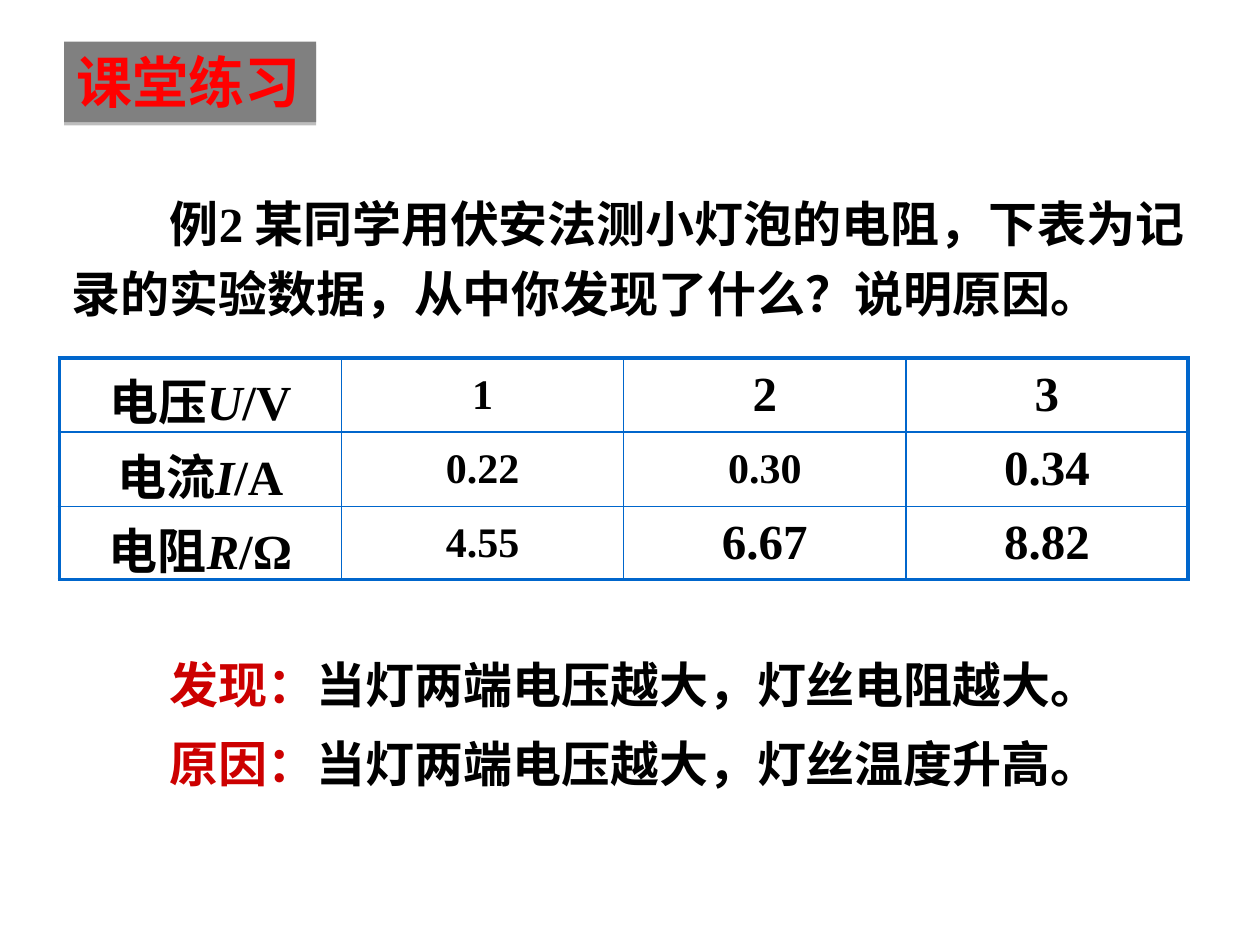
import pptx
import pptx.dml.color
import pptx.enum.shapes
import pptx.enum.text
import pptx.oxml
import pptx.oxml.ns
import pptx.util
from lxml import etree
from pptx.util import Inches

qn = pptx.oxml.ns.qn
ALIGN = pptx.enum.text.PP_ALIGN
ANCHOR = pptx.enum.text.MSO_ANCHOR


def rgb(hex_color):
    return pptx.dml.color.RGBColor.from_string(hex_color)


def add_run(p, text, size=28, font="Noto Sans CJK SC", color="000000", italic=False):
    r = p.add_run()
    r.text = text
    r.font.size = pptx.util.Pt(size)
    r.font.name = font
    r.font.bold = True
    r.font.italic = italic
    r.font.color.rgb = rgb(color)
    ea = etree.SubElement(r.font._element, qn("a:ea"))
    ea.set("typeface", "Noto Sans CJK SC")
    return r


class Deck:
    LATIN = "Times New Roman"
    BLUE, RED, DARK_RED, GRAY = "0066CC", "FF0000", "CC0000", "808080"
    THIN, THICK = 1, 2.25

    def __init__(self):
        self.prs = pptx.Presentation()
        self.prs.slide_width, self.prs.slide_height = Inches(10), Inches(7.5)
        self.s = self.prs.slides.add_slide(self.prs.slide_layouts[6])

    def text(self, x, y, w, h, paragraphs):
        """Each paragraph is a list of (text, format) runs."""
        tf = self.s.shapes.add_textbox(Inches(x), Inches(y), Inches(w), Inches(h)).text_frame
        tf.word_wrap = True
        for i, runs in enumerate(paragraphs):
            p = tf.paragraphs[0] if i == 0 else tf.add_paragraph()
            p.line_spacing = 1.2
            p.space_before = pptx.util.Pt(5)
            p._p.get_or_add_pPr().set("indent", str(Inches(0.78)))
            for text, fmt in runs:
                add_run(p, text, **fmt)

    def heading(self, x, y, w, h, text):
        sp = self.s.shapes.add_shape(pptx.enum.shapes.MSO_SHAPE.RECTANGLE,
                                     Inches(x), Inches(y), Inches(w), Inches(h))
        sp.fill.solid()
        sp.fill.fore_color.rgb = rgb(self.GRAY)
        sp.line.fill.background()
        sp.shadow.inherit = False
        effects = sp._element.spPr.find(qn("a:effectLst"))
        effects.append(pptx.oxml.parse_xml(
            '<a:outerShdw xmlns:a="http://schemas.openxmlformats.org/drawingml/2006/main"'
            ' dist="22860" dir="5400000" algn="ctr" rotWithShape="0">'
            '<a:srgbClr val="000000"><a:alpha val="25000"/></a:srgbClr></a:outerShdw>'))
        tf = sp.text_frame
        tf.word_wrap = False
        tf.vertical_anchor = ANCHOR.TOP
        tf.paragraphs[0].alignment = ALIGN.LEFT
        add_run(tf.paragraphs[0], text, size=32, color=self.RED)

    def border(self, cell, side, width):
        ln = etree.SubElement(cell._tc.get_or_add_tcPr(), qn("a:" + side))
        ln.set("w", str(pptx.util.Pt(width)))
        fill = etree.SubElement(ln, qn("a:solidFill"))
        etree.SubElement(fill, qn("a:srgbClr")).set("val", self.BLUE)

    def table(self, x, y, col_width, row_heights, rows):
        """Each cell is a list of (text, format) runs."""
        n_rows, n_cols = len(rows), len(rows[0])
        tbl = self.s.shapes.add_table(n_rows, n_cols, Inches(x), Inches(y),
                                      Inches(col_width * n_cols), Inches(sum(row_heights))).table
        tbl.first_row = tbl.horz_banding = False
        for col in tbl.columns:
            col.width = Inches(col_width)
        for i, row in enumerate(rows):
            tbl.rows[i].height = Inches(row_heights[i])
            for j, runs in enumerate(row):
                cell = tbl.cell(i, j)
                cell.vertical_anchor = ANCHOR.MIDDLE
                p = cell.text_frame.paragraphs[0]
                p.alignment = ALIGN.CENTER
                for text, fmt in runs:
                    add_run(p, text, font=self.LATIN, **fmt)
                # Thick outer frame, thin inner grid
                outer = {"lnL": j == 0, "lnR": j == n_cols - 1,
                         "lnT": i == 0, "lnB": i == n_rows - 1}
                for side, is_outer in outer.items():
                    self.border(cell, side, self.THICK if is_outer else self.THIN)
                cell.fill.background()


def main():
    d = Deck()

    # Findings
    red = {"color": d.DARK_RED}
    d.text(0.47, 5.05, 8.75, 1.37, [
        [("发现：", red), ("当灯两端电压越大，灯丝电阻越大。", {})],
        [("原因：", red), ("当灯两端电压越大，灯丝温度升高。", {})],
    ])

    # Question
    d.text(0.47, 1.39, 9.1, 1.22, [[
        ("例", {}), ("2", {"font": d.LATIN}),
        (" 某同学用伏安法测小灯泡的电阻，下表为记录的实验数据，从中你发现了什么？说明原因。", {}),
    ]])

    # Measurements: name, symbol, unit, then (value, size)
    data = [
        ("电压", "U", "/V", [("1", 24), ("2", 28), ("3", 28)]),
        ("电流", "I", "/A", [("0.22", 24), ("0.30", 24), ("0.34", 28)]),
        ("电阻", "R", "/Ω", [("4.55", 24), ("6.67", 28), ("8.82", 28)]),
    ]
    rows = [[[(name, {}), (symbol, {"italic": True}), (unit, {})]]
            + [[(value, {"size": size})] for value, size in values]
            for name, symbol, unit, values in data]
    d.table(0.47, 2.84, 2.24, [0.59, 0.59, 0.58], rows)

    # Heading
    d.heading(0.51, 0.33, 2, 0.64, "课堂练习")

    d.prs.save("out.pptx")


if __name__ == "__main__":
    main()
